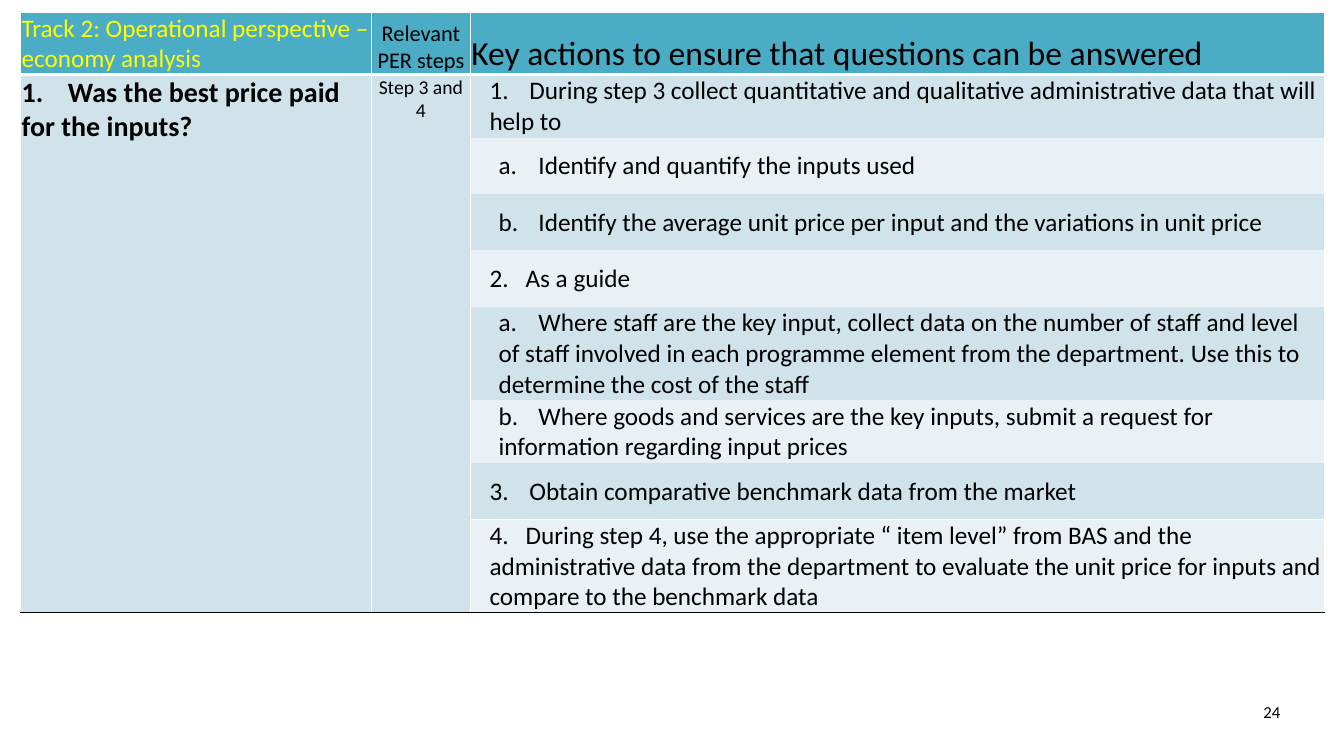
import pptx
import pptx.dml.color
import pptx.enum.text
import pptx.oxml
import pptx.oxml.ns
import pptx.util

Pt = pptx.util.Pt
ALIGN = pptx.enum.text.PP_ALIGN
ANCHOR = pptx.enum.text.MSO_ANCHOR

COLOURS = {
    "header": "4BACC6",
    "band_dark": "D0E3EA",
    "band_light": "E9F1F5",
    "white": "FFFFFF",
    "black": "000000",
    "yellow": "FFFF00",
}
COLUMN_WIDTHS = [250.6, 70.6, 609.9]
ROW_HEIGHTS = [44.5, 45, 40.3, 40.3, 40.3, 66.5, 45, 40.3, 66.5]
MAIN_INDENT, SUB_INDENT = 13.7, 20.2
WIDE_TAB, NARROW_TAB = 28.5, 25.8

HEADERS = [
    ("Track 2: Operational perspective – economy analysis", 18, "yellow", ALIGN.LEFT),
    ("Relevant PER steps", 16, "black", ALIGN.CENTER),
    ("Key actions to ensure that questions can be answered", 24, "black", ALIGN.LEFT),
]
# Each action: number, wording, left inset, tab stop
ACTIONS = [
    ("1.", "During step 3 collect quantitative and qualitative administrative data "
     "that will help to", MAIN_INDENT, WIDE_TAB),
    ("a.", "Identify and quantify the inputs used", SUB_INDENT, WIDE_TAB),
    ("b.", "Identify the average unit price per input and the variations in unit price",
     SUB_INDENT, WIDE_TAB),
    ("2.", "As a guide", MAIN_INDENT, NARROW_TAB),
    ("a.", "Where staff are the key input, collect data on the number of staff and level "
     "of staff involved in each programme element from the department. Use this to "
     "determine the cost of the staff", SUB_INDENT, WIDE_TAB),
    ("b.", "Where goods and services are the key inputs, submit a request for "
     "information regarding input prices", SUB_INDENT, WIDE_TAB),
    ("3.", "Obtain comparative benchmark data from the market", MAIN_INDENT, WIDE_TAB),
    ("4.", "During step 4, use the appropriate “ item level” from BAS and the "
     "administrative data from the department to evaluate the unit price for inputs and "
     "compare to the benchmark data", MAIN_INDENT, NARROW_TAB),
]


def colour(name):
    return pptx.dml.color.RGBColor.from_string(COLOURS[name])


def write(paragraph, text, size, ink="black", align=ALIGN.LEFT, bold=False, tab=None):
    paragraph.add_run().text = text
    paragraph.alignment = align
    if tab:
        properties = paragraph._p.get_or_add_pPr()
        properties.append(pptx.oxml.parse_xml(
            f'<a:tabLst {pptx.oxml.ns.nsdecls("a")}>'
            f'<a:tab pos="{Pt(tab)}" algn="l"/></a:tabLst>'))
    font = paragraph.font
    font.name = "Calibri"
    font.size = Pt(size)
    font.bold = bold
    font.color.rgb = colour(ink)


def set_borders(cell, borders):
    """Draw the sides given as {side: (colour, width)} and clear the others."""
    properties = cell._tc.get_or_add_tcPr()
    for side in "LRTB":
        name, width = borders.get(side, (None, 0))
        line = (f'<a:solidFill><a:srgbClr val="{COLOURS[name]}"/></a:solidFill>'
                if name else "<a:noFill/>")
        properties.append(pptx.oxml.parse_xml(
            f'<a:ln{side} {pptx.oxml.ns.nsdecls("a")} w="{Pt(width)}">{line}</a:ln{side}>'))


def style_cell(cell, fill, anchor, borders, left=0.7):
    set_borders(cell, borders)
    cell.fill.solid()
    cell.fill.fore_color.rgb = colour(fill)
    cell.vertical_anchor = anchor
    cell.margin_left = Pt(left)
    cell.margin_right = cell.margin_top = Pt(0.7)
    cell.margin_bottom = Pt(0)


def add_grid(page):
    frame = page.shapes.add_table(
        len(ROW_HEIGHTS), len(COLUMN_WIDTHS), Pt(14.8), Pt(8.6),
        Pt(sum(COLUMN_WIDTHS)), Pt(sum(ROW_HEIGHTS)))
    table = frame.table
    table.first_row = table.horz_banding = False
    for column, width in zip(table.columns, COLUMN_WIDTHS):
        column.width = Pt(width)
    for row, height in zip(table.rows, ROW_HEIGHTS):
        row.height = Pt(height)
    return table


def fill_header(table):
    borders = {side: ("white", 1) for side in "LRT"} | {"B": ("white", 3)}
    for index, (text, size, ink, align) in enumerate(HEADERS):
        cell = table.cell(0, index)
        style_cell(cell, "header", ANCHOR.BOTTOM, borders)
        write(cell.text_frame.paragraphs[0], text, size, ink, align)


def fill_merged_column(table, index, text, size, **style):
    last = len(ROW_HEIGHTS) - 1
    borders = {side: ("white", 1) for side in "LRT"} | {"B": ("black", 1)}
    for row in range(1, last + 1):
        style_cell(table.cell(row, index), "band_dark", ANCHOR.TOP, borders)
    top = table.cell(1, index)
    top.merge(table.cell(last, index))
    write(top.text_frame.paragraphs[0], text, size, **style)


def fill_actions(table):
    last = len(ACTIONS)
    for row, (number, text, left, tab) in enumerate(ACTIONS, start=1):
        borders = {"L": ("white", 1), "R": ("white", 1)}
        if row in (1, last):
            borders["T"] = ("white", 1)
        if row >= last - 1:
            borders["B"] = ("black" if row == last else "white", 1)
        cell = table.cell(row, 2)
        band = "band_dark" if row % 2 else "band_light"
        style_cell(cell, band, ANCHOR.MIDDLE, borders, left)
        write(cell.text_frame.paragraphs[0], f"{number}\t{text}", 18, tab=tab)


def add_page_number(page, number):
    box = page.shapes.add_textbox(Pt(866.9), Pt(497.5), Pt(54.7), Pt(28))
    box.text_frame.word_wrap = True
    write(box.text_frame.paragraphs[0], number, 12, align=ALIGN.RIGHT)


def main():
    deck = pptx.Presentation()
    deck.slide_width, deck.slide_height = Pt(960), Pt(540)
    page = deck.slides.add_slide(deck.slide_layouts[6])

    # Table of the question and its key actions
    table = add_grid(page)
    fill_header(table)
    fill_merged_column(table, 0, "1.\tWas the best price paid for the inputs?", 20,
                       bold=True, tab=33)
    fill_merged_column(table, 1, "Step 3 and 4", 14, align=ALIGN.CENTER)
    fill_actions(table)

    # Page number
    add_page_number(page, "24")
    deck.save("out.pptx")


if __name__ == "__main__":
    main()
